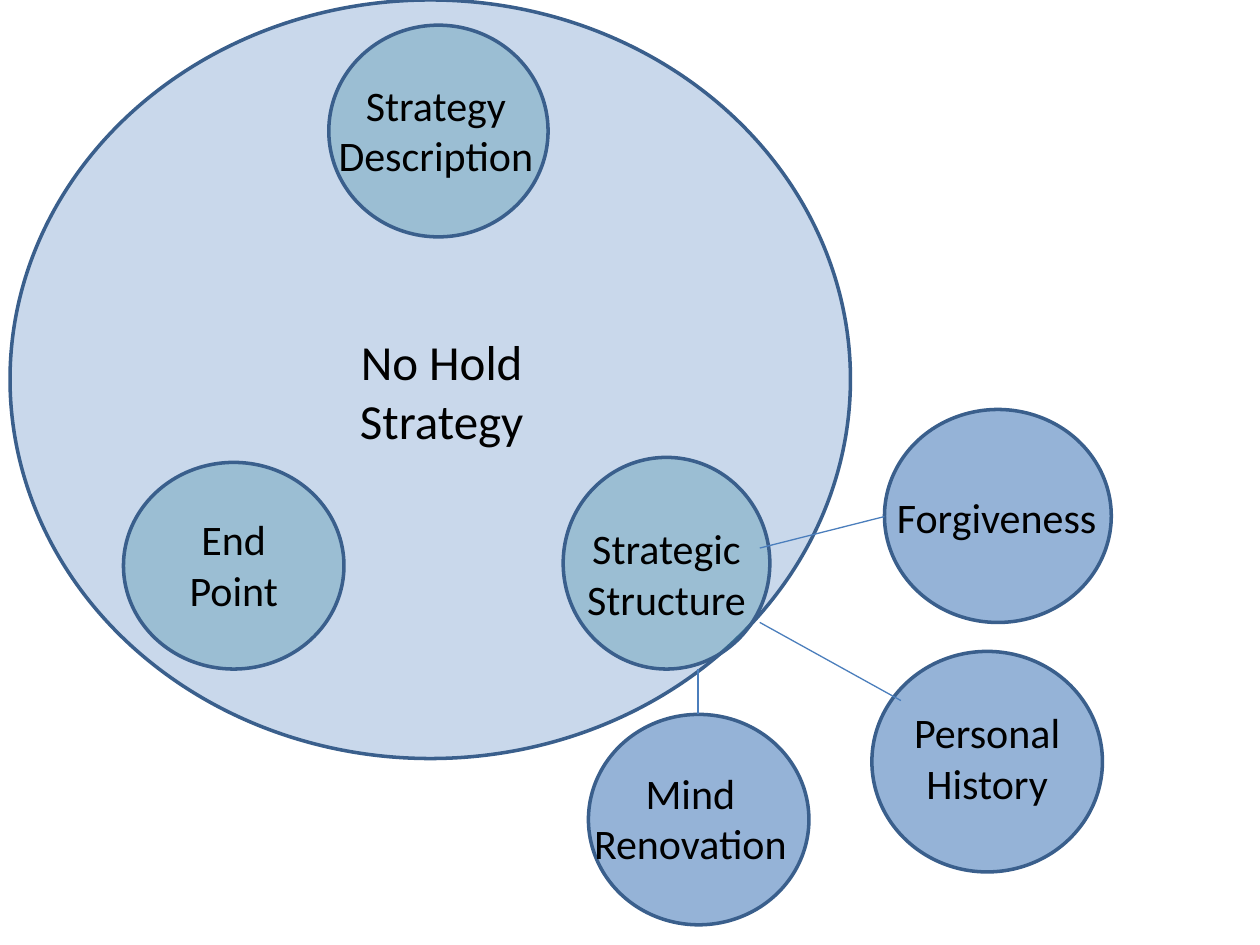
import pptx
import pptx.util
import pptx.dml.color
import pptx.enum.shapes
import pptx.enum.text
import pptx.oxml.ns
import lxml.etree

Inches, Pt = pptx.util.Inches, pptx.util.Pt
RGB = pptx.dml.color.RGBColor.from_string
ALIGN = pptx.enum.text.PP_ALIGN

color = {"main": "4F81BD", "part": "31859C", "topic": "95B3D7",
         "edge": "3A5F8C", "link": "4B7EBC", "text": "000000"}
alpha = {"main": 30, "part": 30, "topic": 100}  # percent opaque

deck = pptx.Presentation()
deck.slide_width, deck.slide_height = Inches(10), Inches(7.5)
slide = deck.slides.add_slide(deck.slide_layouts[6])
shapes = slide.shapes


def add_oval(kind, box):
    oval = shapes.add_shape(pptx.enum.shapes.MSO_SHAPE.OVAL, *map(Inches, box))
    oval.shadow.inherit = False
    oval.fill.solid()
    oval.fill.fore_color.rgb = RGB(color[kind])
    if alpha[kind] < 100:
        tone = oval.fill._xPr.find(".//" + pptx.oxml.ns.qn("a:srgbClr"))
        lxml.etree.SubElement(tone, pptx.oxml.ns.qn("a:alpha"),
                              val=str(alpha[kind] * 1000))
    oval.line.color.rgb = RGB(color["edge"])
    oval.line.width = Pt(2)


def add_label(lines, box, size, wrap=False, align=ALIGN.CENTER):
    frame = shapes.add_textbox(*map(Inches, box)).text_frame
    frame.word_wrap = wrap
    frame.auto_size = pptx.enum.text.MSO_AUTO_SIZE.SHAPE_TO_FIT_TEXT
    for i, line in enumerate(lines):
        para = frame.add_paragraph() if i else frame.paragraphs[0]
        para.alignment = align
        run = para.add_run()
        run.text = line
        run.font.name = "Calibri"
        run.font.size = Pt(size)
        run.font.color.rgb = RGB(color["text"])


# Main circle
add_oval("main", (0.08, 0, 6.67, 6.02))
add_label(["No Hold", "Strategy"], (2.75, 2.58, 1.51, 1.04), 28)

# Parts inside the main circle
parts = [
    (["Strategy", "Description"], (2.61, 0.2, 1.74, 1.68), (2.58, 0.58, 1.76, 0.91)),
    (["Strategic", "Structure"], (4.47, 3.63, 1.64, 1.68), (4.55, 4.1, 1.48, 0.91)),
    (["End", "Point"], (0.98, 3.67, 1.75, 1.64), (1.4, 4.03, 0.91, 0.91)),
]
for lines, oval, box in parts:
    add_oval("part", oval)
    add_label(lines, box, 24)

# Topics of the strategic structure
topics = [
    (["Forgiveness"], (7.02, 3.25, 1.8, 1.69), (7.02, 3.85, 1.8, 0.5), False, ALIGN.LEFT),
    (["Personal", "History"], (6.92, 5.17, 1.83, 1.75), (7.15, 5.56, 1.37, 0.91),
     False, ALIGN.CENTER),
    (["Mind", "Renovation"], (4.67, 5.67, 1.75, 1.67), (4.55, 6.04, 1.86, 0.91),
     True, ALIGN.CENTER),
]
for lines, oval, box, wrap, align in topics:
    add_oval("topic", oval)
    add_label(lines, box, 24, wrap, align)

# Links from topics to the structure
links = [(7.02, 4.1, 6.03, 4.35), (7.15, 5.56, 6.03, 4.94), (5.54, 5.67, 5.54, 5.31)]
for ends in links:
    link = shapes.add_connector(pptx.enum.shapes.MSO_CONNECTOR.STRAIGHT,
                                *map(Inches, ends))
    link.line.color.rgb = RGB(color["link"])
    link.line.width = Pt(0.75)
    lxml.etree.SubElement(link._element.spPr, pptx.oxml.ns.qn("a:effectLst"))

deck.save("out.pptx")
